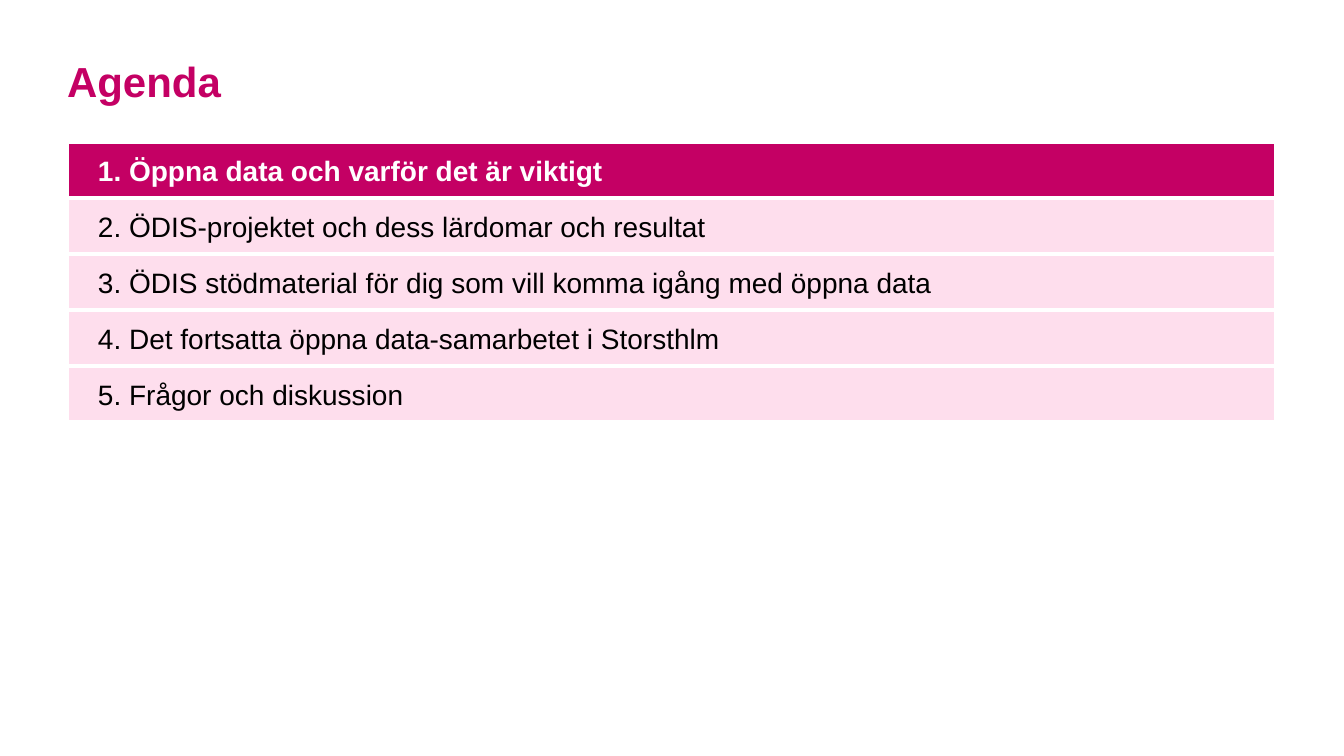
from dataclasses import dataclass

from pptx import Presentation
from pptx.dml.color import RGBColor
from pptx.enum.shapes import MSO_SHAPE
from pptx.enum.text import MSO_ANCHOR, PP_ALIGN
from pptx.util import Cm, Pt


@dataclass(frozen=True)
class Theme:
    font: str = "Arial"
    accent: RGBColor = RGBColor(0xC4, 0x00, 0x64)
    tint: RGBColor = RGBColor(0xFE, 0xDE, 0xED)
    light: RGBColor = RGBColor(0xFF, 0xFF, 0xFF)
    dark: RGBColor = RGBColor(0x00, 0x00, 0x00)
    title_size: Pt = Pt(30)
    item_size: Pt = Pt(20)
    gap: Pt = Pt(3)


THEME = Theme()
TITLE = "Agenda"
ITEMS = [
    "Öppna data och varför det är viktigt",
    "ÖDIS-projektet och dess lärdomar och resultat",
    "ÖDIS stödmaterial för dig som vill komma igång med öppna data",
    "Det fortsatta öppna data-samarbetet i Storsthlm",
    "Frågor och diskussion",
]
CURRENT = 1


def set_insets(tf, left, top, right, bottom):
    tf.margin_left, tf.margin_top = Cm(left), Cm(top)
    tf.margin_right, tf.margin_bottom = Cm(right), Cm(bottom)
    tf.word_wrap = True


def add_run(p, text, size, color, bold):
    p.alignment = PP_ALIGN.LEFT
    r = p.add_run()
    r.text = text
    r.font.name = THEME.font
    r.font.size = size
    r.font.bold = bold
    r.font.color.rgb = color


def add_title(s, text, left, top, width, height):
    tf = s.shapes.add_textbox(left, top, width, height).text_frame
    set_insets(tf, 0, 0.12, 0, 0)
    add_run(tf.paragraphs[0], text, THEME.title_size, THEME.accent, True)


def add_agenda(s, items, current, left, top, width, height):
    row_height = height // len(items)
    for number, item in enumerate(items, 1):
        active = number == current

        # Bar, parted from its neighbours by a white outline
        row_top = top + (number - 1) * row_height
        sp = s.shapes.add_shape(MSO_SHAPE.RECTANGLE, left, row_top, width, row_height)
        sp.shadow.inherit = False
        sp.fill.solid()
        sp.fill.fore_color.rgb = THEME.accent if active else THEME.tint
        sp.line.color.rgb = THEME.light
        sp.line.width = THEME.gap

        # Numbered label
        tf = sp.text_frame
        set_insets(tf, 0.28, 0.28, 0, 0.28)
        tf.vertical_anchor = MSO_ANCHOR.MIDDLE
        p = tf.paragraphs[0]
        p._p.get_or_add_pPr().set("marL", str(Cm(0.5)))
        color = THEME.light if active else THEME.dark
        add_run(p, f"{number}. {item}", THEME.item_size, color, active)


def main():
    prs = Presentation()
    prs.slide_width, prs.slide_height = Cm(33.87), Cm(19.05)
    s = prs.slides.add_slide(prs.slide_layouts[6])

    # Title above the agenda, in one column
    left, width = Cm(1.69), Cm(30.48)
    add_title(s, TITLE, left, Cm(1.27), width, Cm(2.31))
    add_agenda(s, ITEMS, CURRENT, left, Cm(3.58), width, Cm(7.06))

    prs.save("out.pptx")


if __name__ == "__main__":
    main()
